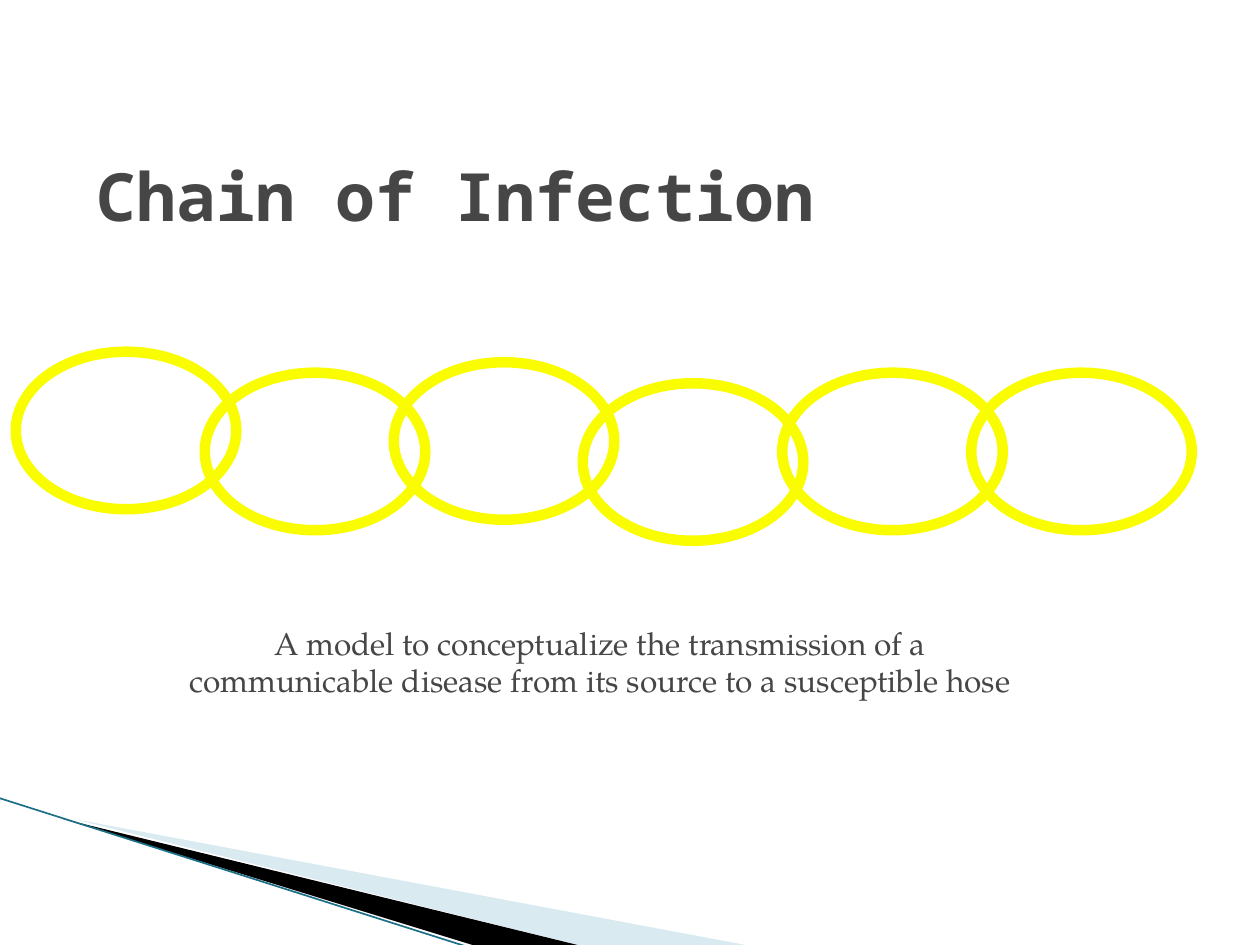
from lxml.etree import SubElement
from pptx import Presentation
from pptx.dml.color import RGBColor
from pptx.enum.shapes import MSO_CONNECTOR, MSO_SHAPE
from pptx.enum.text import MSO_ANCHOR, PP_ALIGN
from pptx.oxml.ns import qn
from pptx.util import Inches, Pt

COLUMNS, ROWS = 120, 90
CELL = Inches(10) // COLUMNS
COLORS = {
    "text": "464646",
    "link": "FAFD00",
    "pale": "A0CBDC",
    "dark": "000000",
    "edge": "1B6F86",
}


def cells(*counts):
    """Turn grid counts into lengths."""
    return [round(count * CELL) for count in counts]


def color(name):
    """Look up a named colour."""
    return RGBColor.from_string(COLORS[name])


def add_wedge(slide, corners, fill, opacity=100):
    """Draw a filled corner wedge through grid points."""
    builder = slide.shapes.build_freeform(*corners[0], scale=CELL)
    builder.add_line_segments(corners[1:], close=True)
    wedge = builder.convert_to_shape()
    wedge.shadow.inherit = False
    wedge.line.fill.background()
    wedge.fill.solid()
    wedge.fill.fore_color.rgb = color(fill)
    if opacity < 100:
        tint = wedge.fill._xPr.find(".//" + qn("a:srgbClr"))
        SubElement(tint, qn("a:alpha"), val=str(opacity * 1000))


def add_edge(slide, start, end):
    """Draw the thin line along the corner wedges."""
    edge = slide.shapes.add_connector(
        MSO_CONNECTOR.STRAIGHT, *cells(*start), *cells(*end)
    )
    edge.line.color.rgb = color("edge")
    edge.line.width = Pt(0.95)
    SubElement(edge._element.spPr, qn("a:effectLst"))


def add_link(slide, left, top):
    """Draw one open link of the chain."""
    link = slide.shapes.add_shape(MSO_SHAPE.OVAL, *cells(left, top, 21, 15))
    link.shadow.inherit = False
    link.fill.background()
    link.line.color.rgb = color("link")
    link.line.width = Pt(6)


def add_text(slide, lines, area, *, font, size, bold=False,
             align=PP_ALIGN.LEFT, anchor=MSO_ANCHOR.TOP, wrap=True):
    """Place lines of text in a grid area."""
    frame = slide.shapes.add_textbox(*cells(*area)).text_frame
    frame.word_wrap = wrap
    frame.vertical_anchor = anchor
    frame.text = "\n".join(lines)
    for paragraph in frame.paragraphs:
        paragraph.alignment = align
        paragraph.font.name = font
        paragraph.font.size = Pt(size)
        paragraph.font.bold = bold
        paragraph.font.color.rgb = color("text")


def main():
    """Build the chain of infection slide."""
    deck = Presentation()
    deck.slide_width, deck.slide_height = cells(COLUMNS, ROWS)
    slide = deck.slides.add_slide(deck.slide_layouts[6])

    add_wedge(slide, [(6.6, 78), (71.4, 90.1), (54.7, 90.1)], "pale", opacity=40)
    add_wedge(slide, [(6.4, 77.9), (54.8, 90.1), (44.6, 90.2)], "dark")
    add_edge(slide, (-0.1, 76), (44.6, 90.2))

    add_text(slide, ["Chain of Infection"], (8, 12, 102, 11),
             font="Noto Sans Mono", size=38, bold=True, anchor=MSO_ANCHOR.BOTTOM)

    for position, drop in enumerate([0, 2, 1, 3, 2, 2]):
        slack = 1 if position > 3 else 0
        add_link(slide, 1.5 + 18 * position + slack, 33.5 + drop)

    add_text(slide,
             ["A model to conceptualize the transmission of a",
              "communicable disease from its source to a susceptible hose"],
             (8.5, 58.8, 97.3, 10.8), font="TeX Gyre Pagella", size=18,
             align=PP_ALIGN.CENTER, wrap=False)

    deck.save("out.pptx")


if __name__ == "__main__":
    main()
